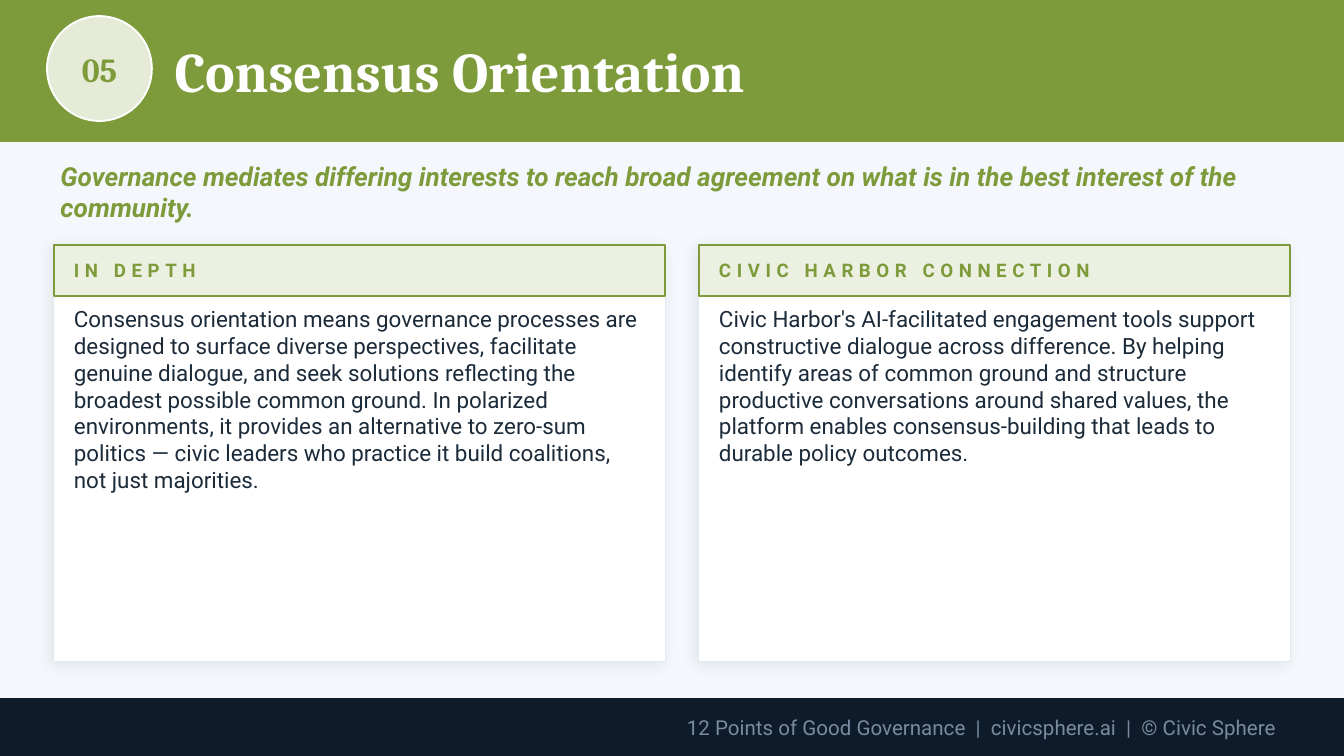
from lxml import etree
from pptx import Presentation
from pptx.dml.color import RGBColor
from pptx.enum.shapes import MSO_SHAPE
from pptx.enum.text import MSO_ANCHOR, PP_ALIGN
from pptx.oxml.ns import qn
from pptx.util import Pt

COLORS = {
    "page": "F4F7FB", "green": "7D9B3A", "white": "FFFFFF", "border": "E0E8F0",
    "ink": "1C2B3A", "navy": "0D1B2A", "muted": "7A8BA0", "black": "000000",
}
NUMBER = "05"
TITLE = "Consensus Orientation"
SUMMARY = (
    "Governance mediates differing interests to reach broad agreement on what is "
    "in the best interest of the community."
)
PANELS = [
    ("IN DEPTH", 327.6,
     "Consensus orientation means governance processes are designed to surface "
     "diverse perspectives, facilitate genuine dialogue, and seek solutions "
     "reflecting the broadest possible common ground. In polarized environments, "
     "it provides an alternative to zero-sum politics — civic leaders who practice "
     "it build coalitions, not just majorities."),
    ("CIVIC HARBOR CONNECTION", 316.8,
     "Civic Harbor's AI-facilitated engagement tools support constructive dialogue "
     "across difference. By helping identify areas of common ground and structure "
     "productive conversations around shared values, the platform enables "
     "consensus-building that leads to durable policy outcomes."),
]
FOOTER = "12 Points of Good Governance  |  civicsphere.ai  |  © Civic Sphere"

STYLES = {
    "number": {"name": "Cambria", "size": Pt(18), "bold": True},
    "title": {"name": "Cambria", "size": Pt(30), "bold": True},
    "summary": {"name": "Roboto", "size": Pt(14), "bold": True, "italic": True},
    "heading": {"name": "Roboto", "size": Pt(10), "bold": True},
    "body": {"name": "Roboto", "size": Pt(12)},
    "footer": {"name": "Roboto", "size": Pt(11)},
}
WIDTH, HEIGHT = 720, 405
PANEL_LEFT, PANEL_TOP, PANEL_HEIGHT, PANEL_GAP = 28.8, 131.04, 223.2, 18
HEADING_HEIGHT, INSET = 27.36, 10.8
BADGE = (25.2, 8.64, 56.16, 56.16)


def rgb(color):
    return RGBColor.from_string(COLORS[color])


def add_color(parent, color, alpha):
    clr = etree.SubElement(parent, qn("a:srgbClr"), val=COLORS[color])
    etree.SubElement(clr, qn("a:alpha"), val=str(alpha * 1000))


def add_box(s, box, fill, line, width=1, alpha=None, kind=MSO_SHAPE.RECTANGLE):
    sp = s.shapes.add_shape(kind, *map(Pt, box))
    sp.shadow.inherit = False
    sp.fill.solid()
    sp.fill.fore_color.rgb = rgb(fill)
    sp.line.color.rgb = rgb(line)
    sp.line.width = Pt(width)
    if alpha is not None:
        solid = sp._element.spPr.find(qn("a:solidFill"))
        solid.clear()
        add_color(solid, fill, alpha)
    return sp


def add_shadow(sp):
    effects = sp._element.spPr.find(qn("a:effectLst"))
    shadow = etree.SubElement(
        effects, qn("a:outerShdw"), blurRad=str(Pt(8)), dist=str(Pt(2)),
        dir=str(135 * 60000), algn="bl", rotWithShape="0")
    add_color(shadow, "black", 8)


def add_text(s, box, text, style, color, align=PP_ALIGN.LEFT,
             anchor=MSO_ANCHOR.MIDDLE, spacing=None):
    tf = s.shapes.add_textbox(*map(Pt, box)).text_frame
    frame = {"word_wrap": True, "vertical_anchor": anchor, "margin_left": 0,
             "margin_right": 0, "margin_top": 0, "margin_bottom": 0}
    for key, value in frame.items():
        setattr(tf, key, value)
    p = tf.paragraphs[0]
    p.alignment = align
    r = p.add_run()
    r.text = text
    for key, value in STYLES[style].items():
        setattr(r.font, key, value)
    r.font.color.rgb = rgb(color)
    if spacing:
        r._r.get_or_add_rPr().set("spc", str(spacing * 100))


def add_panel(s, left, width, heading, body):
    card = add_box(s, (left, PANEL_TOP, width, PANEL_HEIGHT), "white", "border", 0.5)
    add_shadow(card)
    add_box(s, (left, PANEL_TOP, width, HEADING_HEIGHT), "green", "green", alpha=15)
    x, w = left + INSET, width - 2 * INSET
    add_text(s, (x, PANEL_TOP + 2.16, w, 23.04), heading, "heading", "green", spacing=3)
    add_text(s, (x, PANEL_TOP + 32.4, w, 183.6), body, "body", "ink",
             anchor=MSO_ANCHOR.TOP)


def main():
    prs = Presentation()
    prs.slide_width, prs.slide_height = Pt(WIDTH), Pt(HEIGHT)
    s = prs.slides.add_slide(prs.slide_layouts[6])
    s.background.fill.solid()
    s.background.fill.fore_color.rgb = rgb("page")

    add_box(s, (0, 0, WIDTH, 75.6), "green", "green")
    add_box(s, BADGE, "white", "white", alpha=80, kind=MSO_SHAPE.OVAL)
    add_text(s, BADGE, NUMBER, "number", "green", PP_ALIGN.CENTER)
    add_text(s, (93.6, 7.2, 597.6, 61.2), TITLE, "title", "white")
    add_text(s, (32.4, 82.8, 655.2, 39.6), SUMMARY, "summary", "green")

    left = PANEL_LEFT
    for heading, width, body in PANELS:
        add_panel(s, left, width, heading, body)
        left += width + PANEL_GAP

    add_box(s, (0, 374.4, WIDTH, 30.24), "navy", "navy")
    add_text(s, (36, 375.84, 648, 27.36), FOOTER, "footer", "muted", PP_ALIGN.RIGHT)
    prs.save("out.pptx")


if __name__ == "__main__":
    main()
